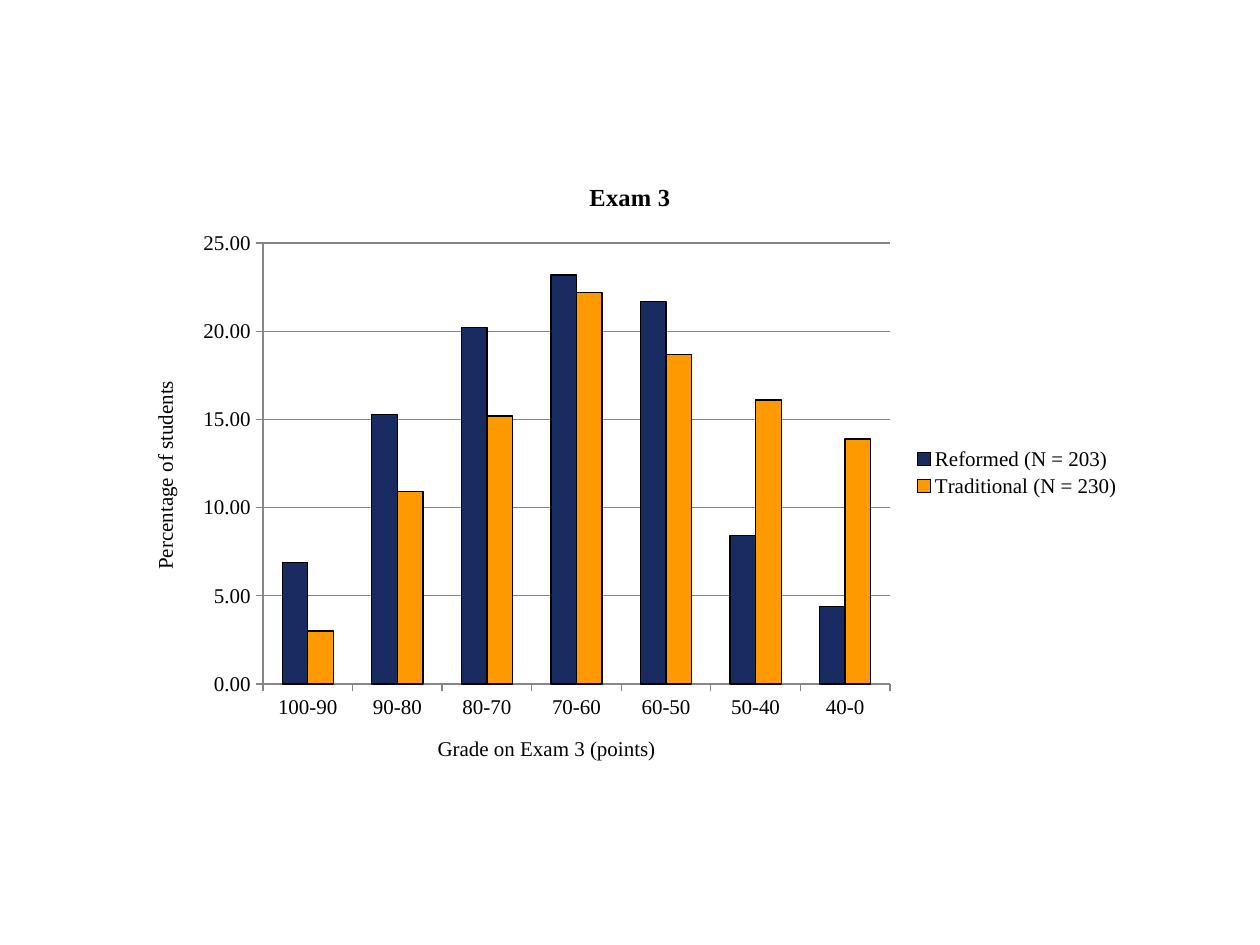
from dataclasses import dataclass

from lxml.etree import SubElement
from pptx import Presentation
from pptx.chart.data import CategoryChartData
from pptx.dml.color import RGBColor
from pptx.enum.chart import XL_CHART_TYPE, XL_LEGEND_POSITION, XL_TICK_MARK
from pptx.oxml.ns import qn
from pptx.util import Inches, Pt


@dataclass(frozen=True)
class Theme:
    font: str = "Times New Roman"
    text: RGBColor = RGBColor(0x00, 0x00, 0x00)
    grid: RGBColor = RGBColor(0x86, 0x86, 0x86)
    reformed: RGBColor = RGBColor(0x19, 0x2C, 0x62)
    traditional: RGBColor = RGBColor(0xFE, 0x99, 0x00)
    body_size: Pt = Pt(12)
    title_size: Pt = Pt(14)
    line_width: Pt = Pt(0.75)


THEME = Theme()

GRADES = ["100-90", "90-80", "80-70", "70-60", "60-50", "50-40", "40-0"]
GROUPS = [
    ("Reformed (N = 203)", [6.9, 15.3, 20.2, 23.2, 21.7, 8.4, 4.4], THEME.reformed),
    ("Traditional (N = 230)", [3, 10.9, 15.2, 22.2, 18.7, 16.1, 13.9], THEME.traditional),
]


def style_font(font, size, bold=False):
    font.name = THEME.font
    font.size = size
    font.bold = bold
    font.color.rgb = THEME.text


def style_line(line, color):
    line.color.rgb = color
    line.width = THEME.line_width


def add_title(owner, text, size, bold=False):
    """Title a chart or one of its axes."""
    span = title_frame(owner).paragraphs[0].add_run()
    span.text = text
    style_font(span.font, size, bold)


def title_frame(owner):
    owner.has_title = True
    title = owner.chart_title if hasattr(owner, "chart_title") else owner.axis_title
    return title.text_frame


def place_plot(chart, **fractions):
    """Fix the inner plot area as fractions of the chart box."""
    plot_area = chart.plots[0]._element.getparent()
    layout = plot_area.find(qn("c:layout"))
    if layout is None:
        layout = SubElement(plot_area, qn("c:layout"))
        plot_area.insert(0, layout)
    manual = SubElement(layout, qn("c:manualLayout"))
    settings = {"layoutTarget": "inner", "xMode": "edge", "yMode": "edge", **fractions}
    for name, value in settings.items():
        SubElement(manual, qn(f"c:{name}")).set("val", str(value))


def add_grade_chart(page, left, top, width, height):
    data = CategoryChartData(number_format="0.00")
    data.categories = GRADES
    for name, shares, _ in GROUPS:
        data.add_series(name, shares)
    chart = page.shapes.add_chart(
        XL_CHART_TYPE.COLUMN_CLUSTERED, left, top, width, height, data
    ).chart
    style_font(chart.font, THEME.body_size)
    add_title(chart, "Exam 3", THEME.title_size, bold=True)
    place_plot(chart, x=0.136, y=0.136, w=0.622, h=0.7)

    # Columns
    plot = chart.plots[0]
    plot.gap_width = 150
    plot.overlap = 0
    plot.vary_by_categories = False
    for series, (_, _, color) in zip(plot.series, GROUPS):
        series.format.fill.solid()
        series.format.fill.fore_color.rgb = color
        style_line(series.format.line, THEME.text)

    # Axes
    axes = [
        (chart.category_axis, "Grade on Exam 3 (points)"),
        (chart.value_axis, "Percentage of students"),
    ]
    for axis, title in axes:
        add_title(axis, title, THEME.body_size)
        axis.major_tick_mark = XL_TICK_MARK.OUTSIDE
        axis.minor_tick_mark = XL_TICK_MARK.NONE
        style_font(axis.tick_labels.font, THEME.body_size)
        style_line(axis.format.line, THEME.grid)
    scale = chart.value_axis
    scale.minimum_scale, scale.maximum_scale, scale.major_unit = 0, 25, 5
    scale.tick_labels.number_format = "0.00"
    scale.tick_labels.number_format_is_linked = False
    scale.has_major_gridlines = True
    style_line(scale.major_gridlines.format.line, THEME.grid)

    # Legend
    chart.has_legend = True
    chart.legend.position = XL_LEGEND_POSITION.RIGHT
    chart.legend.include_in_layout = False
    style_font(chart.legend.font, THEME.body_size)


def main():
    deck = Presentation()
    deck.slide_width, deck.slide_height = Inches(10), Inches(7.5)
    page = deck.slides.add_slide(deck.slide_layouts[6])
    add_grade_chart(page, Inches(1), Inches(1.25), Inches(8), Inches(5))
    deck.save("out.pptx")


if __name__ == "__main__":
    main()
